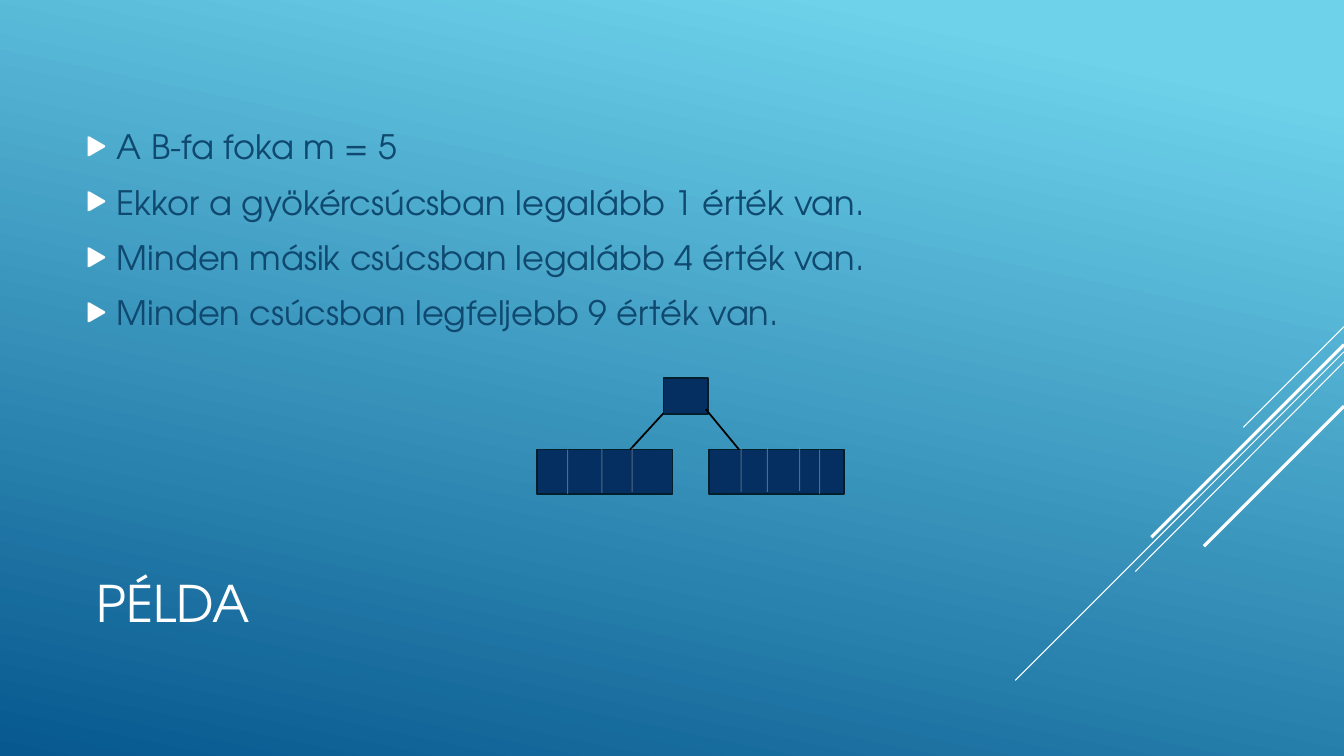
from dataclasses import dataclass

from lxml import etree
from pptx import Presentation
from pptx.dml.color import RGBColor
from pptx.enum.shapes import MSO_CONNECTOR, MSO_SHAPE
from pptx.enum.text import MSO_ANCHOR, MSO_AUTO_SIZE, PP_ALIGN
from pptx.oxml.ns import qn
from pptx.util import Inches, Pt

STRAIGHT = MSO_CONNECTOR.STRAIGHT
RECT = MSO_SHAPE.RECTANGLE
MIDDLE = MSO_ANCHOR.MIDDLE
NO_FIT = MSO_AUTO_SIZE.NONE
LEFT = PP_ALIGN.LEFT


@dataclass(frozen=True)
class Theme:
    font: str = "TeX Gyre Adventor"
    title_size: int = 36
    body_size: int = 24
    sky: str = "6ED2EB"
    deep: str = "06588E"
    white: str = "FFFFFF"
    text: str = "0F496F"
    node: str = "052F61"
    outline: str = "021E2B"
    edge: str = "000000"
    divider: str = "89919C"
    thin: float = 0.75
    medium: float = 1.25
    thick: float = 2.25


THEME = Theme()


def rgb(value):
    return RGBColor.from_string(value)


def add_line(s, x1, y1, x2, y2, color, width, alpha=None):
    line = s.shapes.add_connector(STRAIGHT, Inches(x1), Inches(y1), Inches(x2), Inches(y2))
    line.line.color.rgb = rgb(color)
    line.line.width = Pt(width)
    spPr = line._element.spPr
    if alpha:
        clr = spPr.find(".//" + qn("a:srgbClr"))
        etree.SubElement(clr, qn("a:alpha"), val=str(alpha * 1000))
    etree.SubElement(spPr, qn("a:effectLst"))


def place_text(sp, x, y, w, h):
    sp.left, sp.top, sp.width, sp.height = Inches(x), Inches(y), Inches(w), Inches(h)
    tf = sp.text_frame
    tf.word_wrap = True
    tf.auto_size = NO_FIT
    tf.vertical_anchor = MIDDLE
    return tf


def add_run(p, text, size, color):
    p.alignment = LEFT
    r = p.add_run()
    r.text = text
    r.font.name = THEME.font
    r.font.size = Pt(size)
    r.font.color.rgb = rgb(color)


def add_bullet(p):
    pPr = p._p.get_or_add_pPr()
    pPr.set("marL", str(Inches(0.31)))
    pPr.set("indent", str(-Inches(0.31)))
    clr = etree.SubElement(pPr, qn("a:buClr"))
    etree.SubElement(clr, qn("a:srgbClr"), val=THEME.white)
    etree.SubElement(pPr, qn("a:buSzPct"), val="80000")
    etree.SubElement(pPr, qn("a:buFont"), typeface=THEME.font)
    etree.SubElement(pPr, qn("a:buChar"), char="▶")


def paint_background(s):
    fill = s.background.fill
    fill.gradient()
    fill.gradient_angle = 258
    for stop, pos, color in zip(fill.gradient_stops, (0.1, 1), (THEME.sky, THEME.deep)):
        stop.position = pos
        stop.color.rgb = rgb(color)


def add_rays(s, right, top):
    rays = [
        (0, 1, 1, THEME.thin),
        (0.25, 3.26, 3.26, THEME.thin),
        (0.35, 2.07, 2.08, THEME.thin),
        (0.18, 1.91, 1.91, THEME.thick),
        (0.79, 1.39, 1.39, THEME.thick),
    ]
    for dy, run, drop, width in rays:
        add_line(s, right, top + dy, right - run, top + dy + drop, THEME.white, width)


def add_title(s, text, x, y, w, h):
    tf = place_text(s.shapes.title, x, y, w, h)
    add_run(tf.paragraphs[0], text, THEME.title_size, THEME.white)


def add_body(s, items, x, y, w, h):
    tf = place_text(s.placeholders[1], x, y, w, h)
    for i, item in enumerate(items):
        p = tf.paragraphs[0] if i == 0 else tf.add_paragraph()
        add_bullet(p)
        p.space_before = Pt(4.8 if i else 0)
        p.space_after = Pt(6)
        add_run(p, item, THEME.body_size, THEME.text)


def add_node(s, x, y, w, h):
    sp = s.shapes.add_shape(RECT, Inches(x), Inches(y), Inches(w), Inches(h))
    sp.shadow.inherit = False
    sp.fill.solid()
    sp.fill.fore_color.rgb = rgb(THEME.node)
    sp.line.color.rgb = rgb(THEME.outline)
    sp.line.width = Pt(THEME.medium)


def add_tree(s, x, y):
    leaf_y, leaf_w, leaf_h = y + 0.71, 1.34, 0.44
    leaves = [
        (x, [(0.3, 0), (0.64, -0.01), (0.94, -0.02)]),
        (x + 1.7, [(0.32, -0.02), (0.58, -0.02), (0.9, -0.03), (1.1, 0)]),
    ]
    add_node(s, x + 1.25, y, 0.44, 0.36)
    for leaf_x, _ in leaves:
        add_node(s, leaf_x, leaf_y, leaf_w, leaf_h)
    for x1, y1, x2 in [(1.25, 0.35, 0.92), (1.67, 0.31, 2)]:
        add_line(s, x + x1, y + y1, x + x2, leaf_y, THEME.edge, THEME.medium)
    for leaf_x, dividers in leaves:
        for dx, dy in dividers:
            top = leaf_y + dy
            add_line(s, leaf_x + dx, top, leaf_x + dx, top + leaf_h,
                     THEME.divider, THEME.thin, 60)


def main():
    prs = Presentation()
    prs.slide_width, prs.slide_height = Inches(13.33), Inches(7.5)
    s = prs.slides.add_slide(prs.slide_layouts[1])
    paint_background(s)
    add_rays(s, 13.33, 3.24)
    add_title(s, "PÉLDA", 0.86, 5.15, 9.33, 1.65)
    add_body(s, [
        "A B-fa foka m = 5",
        "Ekkor a gyökércsúcsban legalább 1 érték van.",
        "Minden másik csúcsban legalább 4 érték van.",
        "Minden csúcsban legfeljebb 9 érték van.",
    ], 0.75, 0.75, 9.33, 3.05)
    add_tree(s, 5.33, 3.75)
    prs.save("out.pptx")


if __name__ == "__main__":
    main()
